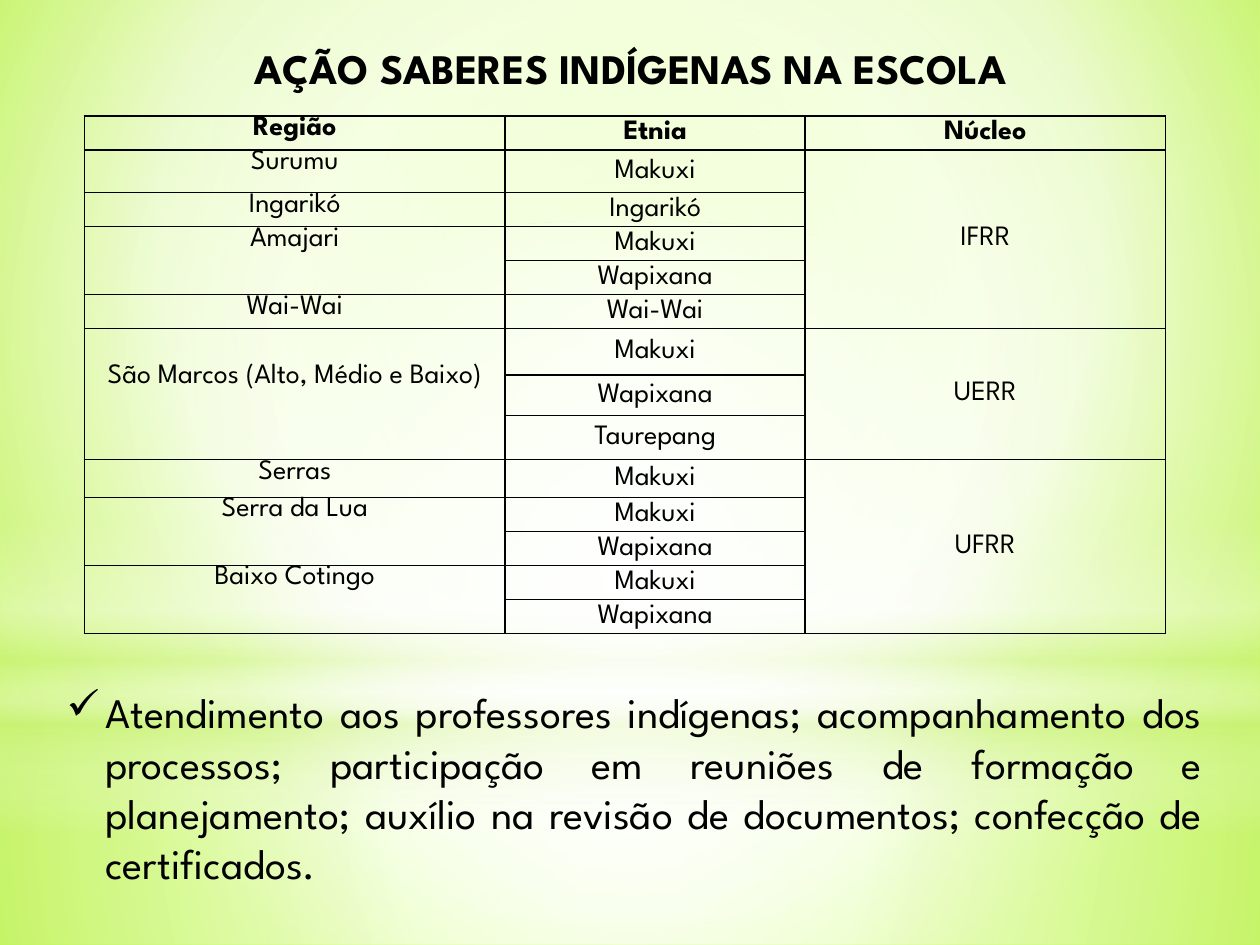
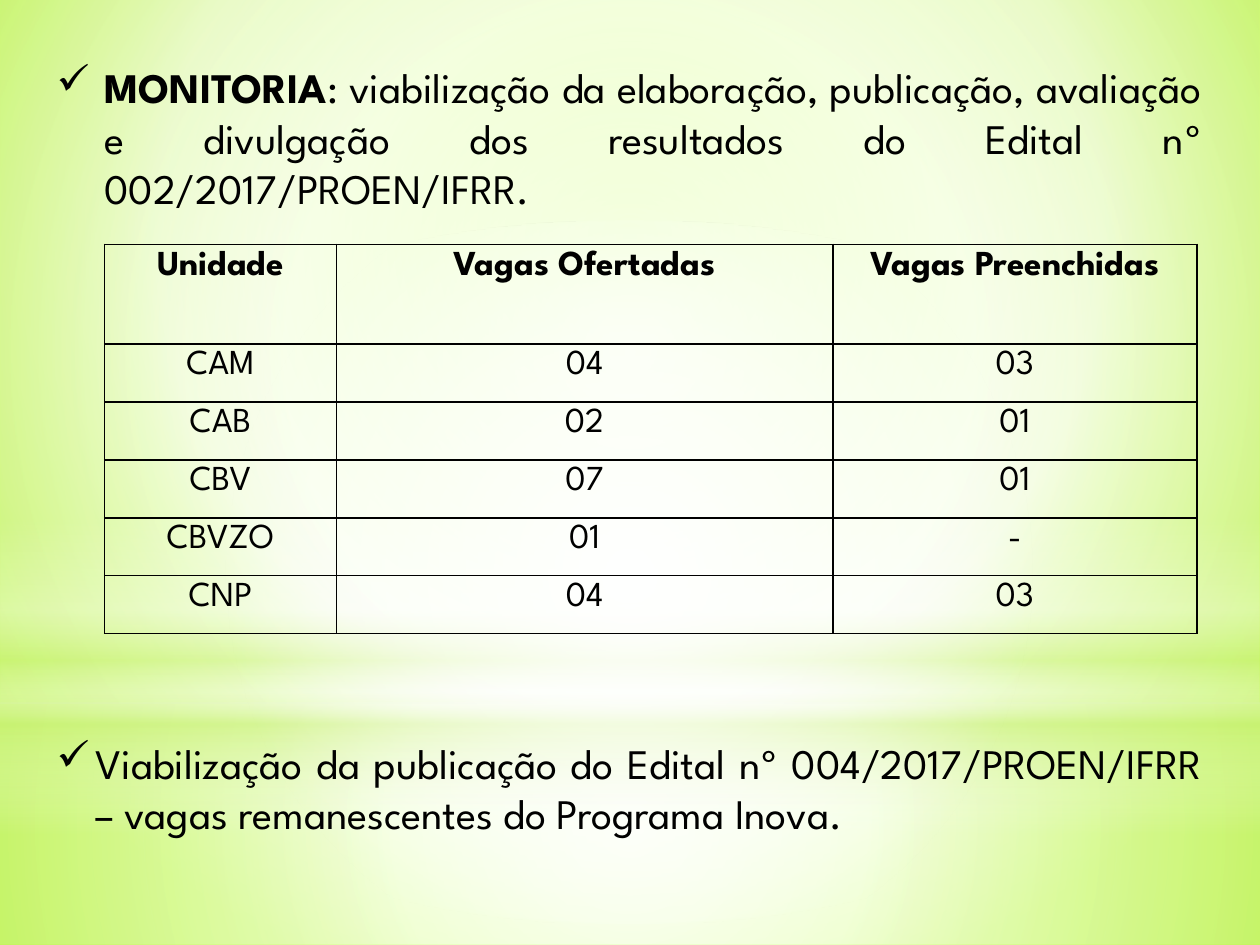
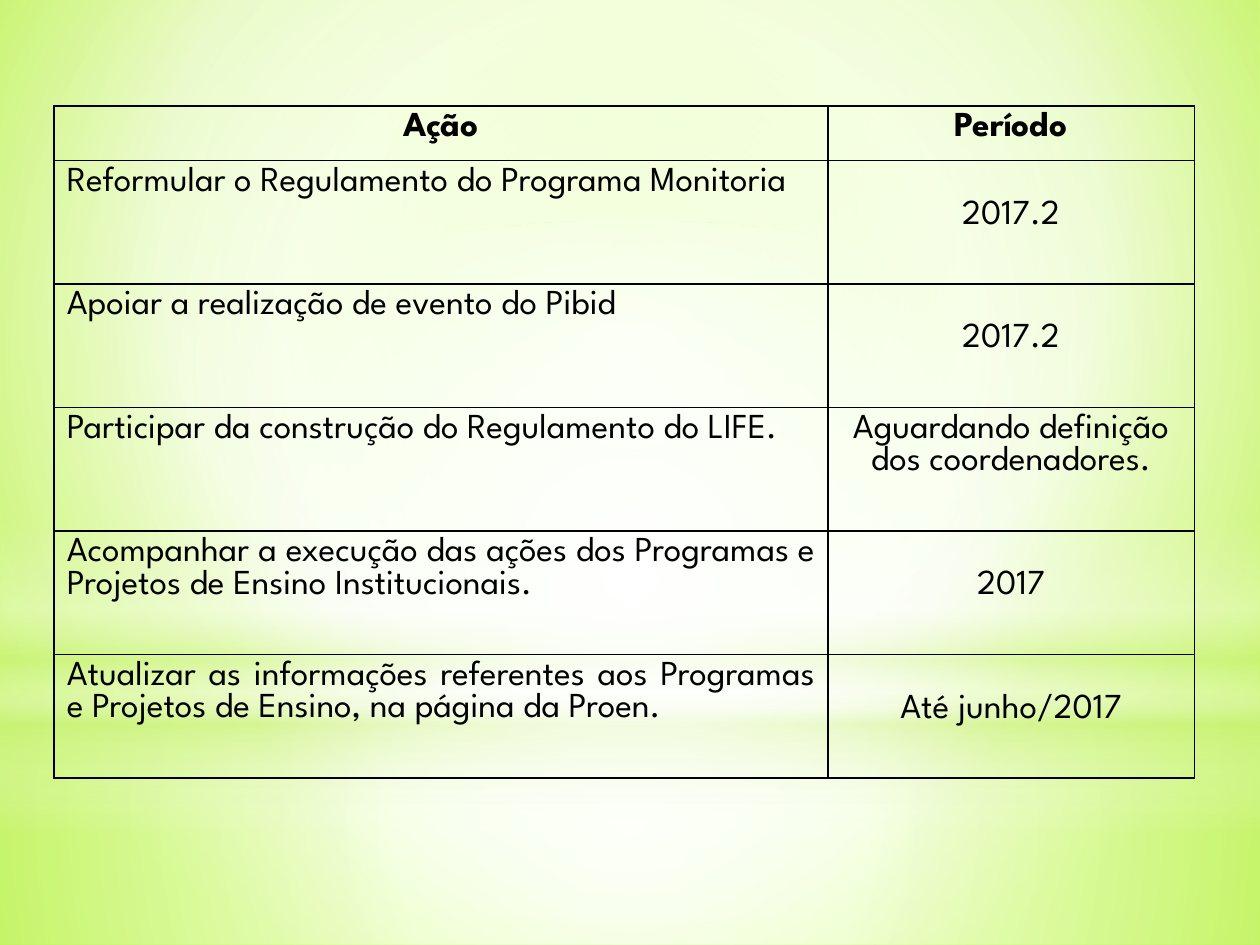
from dataclasses import dataclass
from typing import NamedTuple, Optional

from pptx import Presentation
from pptx.dml.color import RGBColor
from pptx.enum.shapes import MSO_SHAPE as Preset
from pptx.enum.text import MSO_ANCHOR as Anchor, MSO_AUTO_SIZE as AutoSize, PP_ALIGN as Align
from pptx.oxml import parse_xml
from pptx.oxml.ns import nsdecls, qn
from pptx.util import Inches, Pt

FONT = "League Spartan"
COLORS = {
    "text": "000000",
    "border": "000000",
    "white": "FFFFFF",
    "lime": "CAF278",
    "page_start": "CAFF60",
    "page_middle": "F7FFE7",
    "page_end": "B7FF29",
}
CENTERED_FOCUS = (50, 50, 50, 50)


class Stop(NamedTuple):
    position: int
    color: str
    opacity: int = 100


@dataclass(frozen=True)
class Gradient:
    """A circular gradient around focus, or a vertical one without it."""
    stops: tuple[Stop, ...]
    focus: Optional[tuple[int, int, int, int]] = CENTERED_FOCUS


@dataclass(frozen=True)
class Band:
    preset: Preset
    top: float
    height: float
    gradient: Gradient


@dataclass(frozen=True)
class TextBlock:
    left: float
    top: float
    width: float
    height: float
    runs: tuple[tuple[str, bool], ...]
    align: Align = Align.JUSTIFY
    bullet_indent: float = 0


@dataclass(frozen=True)
class Column:
    title: str
    width: float
    align: Align = Align.CENTER
    anchor: Anchor = Anchor.TOP


class Cell(NamedTuple):
    text: str
    drop: float = 0


@dataclass(frozen=True)
class Grid:
    left: float
    top: float
    columns: tuple[Column, ...]
    row_heights: tuple[float, ...]
    rows: tuple[tuple[Optional[Cell], ...], ...]
    font_size: int = 20
    margin_x: float = 0.1
    margin_y: float = 0.05


PAGE = Gradient(
    (Stop(0, "page_start"), Stop(60, "page_middle"), Stop(100, "page_end")),
    (20, 10, 20, 60),
)
BANDS = (
    Band(Preset.RECTANGLE, 5.58, 1.92, Gradient(
        (Stop(0, "white", 91), Stop(37, "white", 76), Stop(100, "lime", 79)))),
    Band(Preset.RECTANGLE, 0, 5.58, Gradient(
        (Stop(0, "white", 89), Stop(48, "white", 62), Stop(100, "lime", 79)))),
    Band(Preset.RECTANGLE, 4.12, 2.5, Gradient(
        (Stop(0, "white", 0), Stop(29, "white", 30), Stop(45, "lime", 40),
         Stop(55, "white", 26), Stop(65, "lime", 60), Stop(100, "white", 0)), None)),
    Band(Preset.OVAL, 1.75, 5.58, Gradient((Stop(0, "white"), Stop(56, "white", 0)))),
)


def rgb(name: str) -> RGBColor:
    return RGBColor.from_string(COLORS[name])


def apply_gradient(element, gradient: Gradient) -> None:
    """Replace the first empty fill inside element by the gradient."""
    stops = "".join(
        f'<a:gs pos="{stop.position * 1000}"><a:srgbClr val="{COLORS[stop.color]}">'
        f'<a:alpha val="{stop.opacity * 1000}"/></a:srgbClr></a:gs>'
        for stop in gradient.stops
    )
    if gradient.focus:
        sides = " ".join(
            f'{side}="{value * 1000}"' for side, value in zip("ltrb", gradient.focus))
        direction = f'<a:path path="circle"><a:fillToRect {sides}/></a:path>'
    else:
        direction = '<a:lin ang="5400000" scaled="0"/>'
    empty_fill = element.find(".//" + qn("a:noFill"))
    empty_fill.getparent().replace(empty_fill, parse_xml(
        f'<a:gradFill {nsdecls("a")} rotWithShape="1">'
        f"<a:gsLst>{stops}</a:gsLst>{direction}</a:gradFill>"))


def add_page(presentation):
    """Add a blank slide with the shared background and light bands."""
    slide = presentation.slides.add_slide(presentation.slide_layouts[6])
    slide.background.fill.background()
    apply_gradient(slide.element, PAGE)
    for band in BANDS:
        shape = slide.shapes.add_shape(
            band.preset, 0, Inches(band.top), presentation.slide_width, Inches(band.height))
        shape.shadow.inherit = False
        shape.fill.background()
        apply_gradient(shape.element, band.gradient)
        shape.line.fill.background()
    return slide


def style_paragraph(paragraph, size: int, align: Align) -> None:
    paragraph.alignment = align
    paragraph.font.name = FONT
    paragraph.font.size = Pt(size)
    paragraph.font.color.rgb = rgb("text")


def add_check_bullet(paragraph, indent: float) -> None:
    properties = paragraph._p.get_or_add_pPr()
    properties.set("marL", str(Inches(indent)))
    properties.set("indent", str(-Inches(indent)))
    bullet = parse_xml(f'<a:buChar {nsdecls("a")} char="✓"/>')
    properties.insert_element_before(bullet, "a:tabLst", "a:defRPr", "a:extLst")


def add_text(slide, block: TextBlock) -> None:
    box = slide.shapes.add_textbox(
        Inches(block.left), Inches(block.top), Inches(block.width), Inches(block.height))
    frame = box.text_frame
    frame.word_wrap = True
    frame.auto_size = AutoSize.SHAPE_TO_FIT_TEXT
    paragraph = frame.paragraphs[0]
    style_paragraph(paragraph, 24, block.align)
    if block.bullet_indent:
        add_check_bullet(paragraph, block.bullet_indent)
    for text, bold in block.runs:
        run = paragraph.add_run()
        run.text = text
        run.font.bold = bold


def outline_cell(cell) -> None:
    properties = cell._tc.get_or_add_tcPr()
    for side in ("lnL", "lnR", "lnT", "lnB"):
        properties.append(parse_xml(
            f'<a:{side} {nsdecls("a")} w="{Pt(1)}"><a:solidFill>'
            f'<a:srgbClr val="{COLORS["border"]}"/></a:solidFill></a:{side}>'))
    cell.fill.background()


def merge_down(table, rows) -> None:
    """Join each cell with the None entries below it."""
    for column in range(len(rows[0])):
        start = 0
        for row in range(1, len(rows) + 1):
            if row == len(rows) or rows[row][column] is not None:
                if row - start > 1:
                    table.cell(start, column).merge(table.cell(row - 1, column))
                start = row


def add_grid(slide, grid: Grid) -> None:
    rows = (tuple(Cell(column.title) for column in grid.columns),) + grid.rows
    table = slide.shapes.add_table(
        len(rows), len(grid.columns), Inches(grid.left), Inches(grid.top),
        Inches(sum(column.width for column in grid.columns)),
        Inches(sum(grid.row_heights))).table
    table.first_row = table.horz_banding = False
    for table_column, column in zip(table.columns, grid.columns):
        table_column.width = Inches(column.width)
    for table_row, height in zip(table.rows, grid.row_heights):
        table_row.height = Inches(height)
    for row_index, row in enumerate(rows):
        for column_index, (column, entry) in enumerate(zip(grid.columns, row)):
            cell = table.cell(row_index, column_index)
            outline_cell(cell)
            cell.margin_left = cell.margin_right = Inches(grid.margin_x)
            cell.margin_top = cell.margin_bottom = Inches(grid.margin_y)
            cell.vertical_anchor = column.anchor
            paragraph = cell.text_frame.paragraphs[0]
            is_header = row_index == 0
            style_paragraph(paragraph, grid.font_size,
                            Align.CENTER if is_header else column.align)
            paragraph.font.bold = is_header
            if entry is not None:
                paragraph.add_run().text = entry.text
                cell.margin_top = Inches(grid.margin_y + entry.drop)
    merge_down(table, rows)


def cells(*texts: Optional[str]) -> tuple[Optional[Cell], ...]:
    return tuple(None if text is None else Cell(text) for text in texts)


def action(text: str, period: str, drop: float = 0.26) -> tuple[Cell, Cell]:
    return Cell(text), Cell(period, drop)


INDIGENOUS_TITLE = TextBlock(
    0.2, 0.29, 9.61, 0.5, (("AÇÃO SABERES INDÍGENAS NA ESCOLA", True),), Align.CENTER)
REGIONS = Grid(
    0.67, 0.92,
    (Column("Região", 3.34),
     Column("Etnia", 2.38, anchor=Anchor.MIDDLE),
     Column("Núcleo", 2.86, anchor=Anchor.MIDDLE)),
    (0.27, 0.34, *[0.27] * 4, 0.37, 0.32, 0.35, 0.3, *[0.27] * 4),
    (cells("Surumu", "Makuxi", "IFRR"),
     cells("Ingarikó", "Ingarikó", None),
     cells("Amajari", "Makuxi", None),
     cells(None, "Wapixana", None),
     cells("Wai-Wai", "Wai-Wai", None),
     (Cell("São Marcos (Alto, Médio e Baixo)", 0.28), *cells("Makuxi", "UERR")),
     cells(None, "Wapixana", None),
     cells(None, "Taurepang", None),
     cells("Serras", "Makuxi", "UFRR"),
     cells("Serra da Lua", "Makuxi", None),
     cells(None, "Wapixana", None),
     cells("Baixo Cotingo", "Makuxi", None),
     cells(None, "Wapixana", None)),
    font_size=16, margin_x=0.07, margin_y=0)
TEACHER_SUPPORT = TextBlock(
    0.43, 5.4, 9.21, 1.72,
    (("Atendimento aos professores indígenas; acompanhamento dos processos; "
      "participação em reuniões de formação e planejamento; auxílio na revisão "
      "de documentos; confecção de certificados.", False),),
    bullet_indent=0.31)

TUTORING = TextBlock(
    0.35, 0.44, 9.29, 1.31,
    (("MONITORIA", True),
     (": viabilização da elaboração, publicação, avaliação e divulgação dos "
      "resultados do Edital nº 002/2017/PROEN/IFRR.", False)),
    bullet_indent=0.38)
VACANCIES = Grid(
    0.83, 1.94,
    (Column("Unidade", 1.84), Column("Vagas Ofertadas", 3.94),
     Column("Vagas Preenchidas", 2.89)),
    (0.79, *[0.46] * 5),
    (cells("CAM", "04", "03"),
     cells("CAB", "02", "01"),
     cells("CBV", "07", "01"),
     cells("CBVZO", "01", "-"),
     cells("CNP", "04", "03")))
REMAINING_VACANCIES = TextBlock(
    0.35, 5.8, 9.29, 1.31,
    (("Viabilização da publicação do Edital nº 004/2017/PROEN/IFRR – vagas "
      "remanescentes do Programa Inova.", False),),
    bullet_indent=0.31)

ACTIONS = Grid(
    0.43, 0.84,
    (Column("Ação", 6.14, Align.JUSTIFY), Column("Período", 2.91)),
    (0.43, *[0.98] * 5),
    (action("Reformular o Regulamento do Programa Monitoria", "2017.2"),
     action("Apoiar a realização de evento do Pibid", "2017.2"),
     action("Participar da construção do Regulamento do LIFE.",
            "Aguardando definição dos coordenadores.", drop=0),
     action("Acompanhar a execução das ações dos Programas e Projetos de Ensino "
            "Institucionais.", "2017"),
     action("Atualizar as informações referentes aos Programas e Projetos de Ensino, "
            "na página da Proen.", "Até junho/2017")))

PAGES = (
    (INDIGENOUS_TITLE, REGIONS, TEACHER_SUPPORT),
    (TUTORING, VACANCIES, REMAINING_VACANCIES),
    (ACTIONS,),
)


def main() -> None:
    presentation = Presentation()
    presentation.slide_width = Inches(10)
    presentation.slide_height = Inches(7.5)
    for items in PAGES:
        slide = add_page(presentation)
        for item in items:
            if isinstance(item, Grid):
                add_grid(slide, item)
            else:
                add_text(slide, item)
    presentation.save("out.pptx")


if __name__ == "__main__":
    main()
